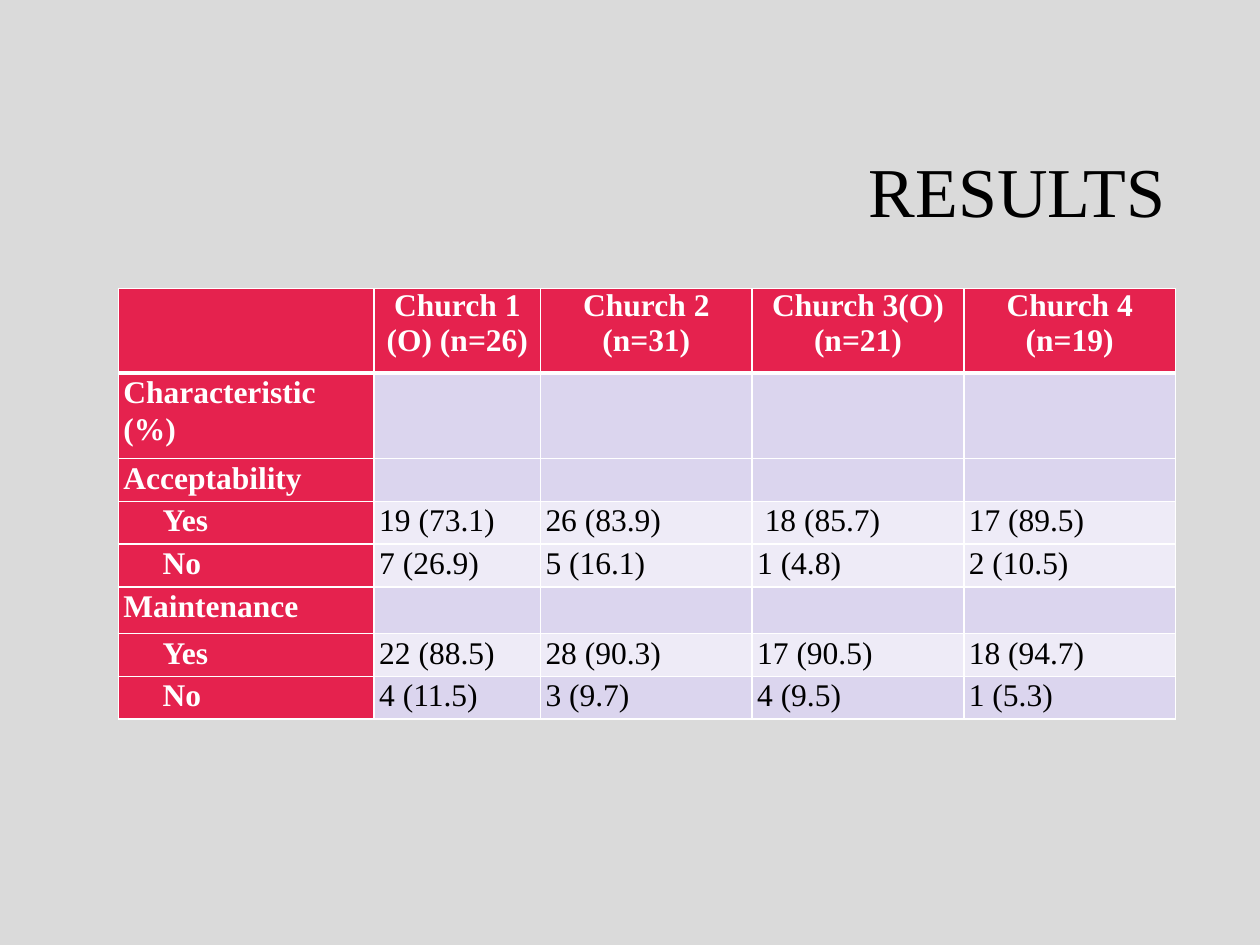
from lxml import etree
from pptx import Presentation
from pptx.dml.color import RGBColor
from pptx.enum import text
from pptx.oxml.ns import qn
from pptx.util import Inches, Pt

FONT = "Times New Roman"
RED, LILAC, PALE = "E5224E", "DBD5EE", "EEEBF7"
WHITE, BLACK, GREY = "FFFFFF", "000000", "DADADA"
HEADER = ["", "Church 1 (O) (n=26)", "Church 2 (n=31)", "Church 3(O) (n=21)", "Church 4 (n=19)"]
BLANK = [""] * 4
ROWS = [
    (HEADER, 0.67, RED),
    (["Characteristic (%)"] + BLANK, 0.68, LILAC),
    (["Acceptability"] + BLANK, 0.34, LILAC),
    (["Yes", "19 (73.1)", "26 (83.9)", "18 (85.7)", "17 (89.5)"], 0.34, PALE),
    (["No", "7 (26.9)", "5 (16.1)", "1 (4.8)", "2 (10.5)"], 0.34, PALE),
    (["Maintenance"] + BLANK, 0.37, LILAC),
    (["Yes", "22 (88.5)", "28 (90.3)", "17 (90.5)", "18 (94.7)"], 0.34, PALE),
    (["No", "4 (11.5)", "3 (9.7)", "4 (9.5)", "1 (5.3)"], 0.34, LILAC),
]
WIDTHS = [2.03, 1.32, 1.68, 1.68, 1.68]
INDENTS = {"Yes": 0.31, "No": 0.31, "18 (85.7)": 0.06}


def color(value):
    return RGBColor.from_string(value)


def set_font(font, size, value, bold=False):
    font.name, font.size, font.bold = FONT, Pt(size), bold
    font.color.rgb = color(value)


def set_borders(cell, widths):
    properties = cell._tc.get_or_add_tcPr()
    for position, (side, width) in enumerate(widths.items()):
        line = etree.Element(qn(f"a:ln{side}"), w=str(Pt(width)))
        fill = etree.SubElement(line, qn("a:solidFill"))
        etree.SubElement(fill, qn("a:srgbClr"), val=WHITE)
        properties.insert(position, line)


def fill_cell(cell, wording, row, column, shade):
    heading = row == 0 or column == 0
    cell.fill.solid()
    cell.fill.fore_color.rgb = color(RED if heading else shade)
    cell.margin_left = Inches(0.04 + INDENTS.get(wording, 0))
    cell.margin_right = Inches(0.04)
    cell.margin_top = cell.margin_bottom = 0
    set_borders(cell, {"L": 1, "R": 1, "T": 3 if row == 1 else 1, "B": 3 if row == 0 else 1})
    cell.text = wording
    para = cell.text_frame.paragraphs[0]
    if row == 0:
        para.alignment = text.PP_ALIGN.CENTER
    else:
        para.line_spacing = 1.07
    set_font(para.font, 18, WHITE if heading else BLACK, heading)


def add_title(slide):
    title = slide.shapes.title
    title.left, title.top, title.width, title.height = map(Inches, (2.38, 0.84, 6.97, 1.41))
    title.text = "RESULTS"
    title.text_frame.vertical_anchor = text.MSO_ANCHOR.MIDDLE
    para = title.text_frame.paragraphs[0]
    para.alignment = text.PP_ALIGN.RIGHT
    para.line_spacing = 0.9
    set_font(para.font, 40, BLACK)


def add_results(slide):
    total_height = sum(height for _, height, _ in ROWS)
    frame = slide.shapes.add_table(
        len(ROWS), len(WIDTHS), Inches(0.94), Inches(2.29), Inches(sum(WIDTHS)), Inches(total_height))
    table = frame.table
    table.first_col = True
    table.horz_banding = False
    for column, width in zip(table.columns, WIDTHS):
        column.width = Inches(width)
    for row, (wordings, height, shade) in enumerate(ROWS):
        table.rows[row].height = Inches(height)
        for column, wording in enumerate(wordings):
            fill_cell(table.cell(row, column), wording, row, column, shade)


def main():
    deck = Presentation()
    deck.slide_width, deck.slide_height = Inches(10), Inches(7.5)
    slide = deck.slides.add_slide(deck.slide_layouts[5])
    slide.background.fill.solid()
    slide.background.fill.fore_color.rgb = color(GREY)
    add_title(slide)
    add_results(slide)
    deck.save("out.pptx")


if __name__ == "__main__":
    main()
